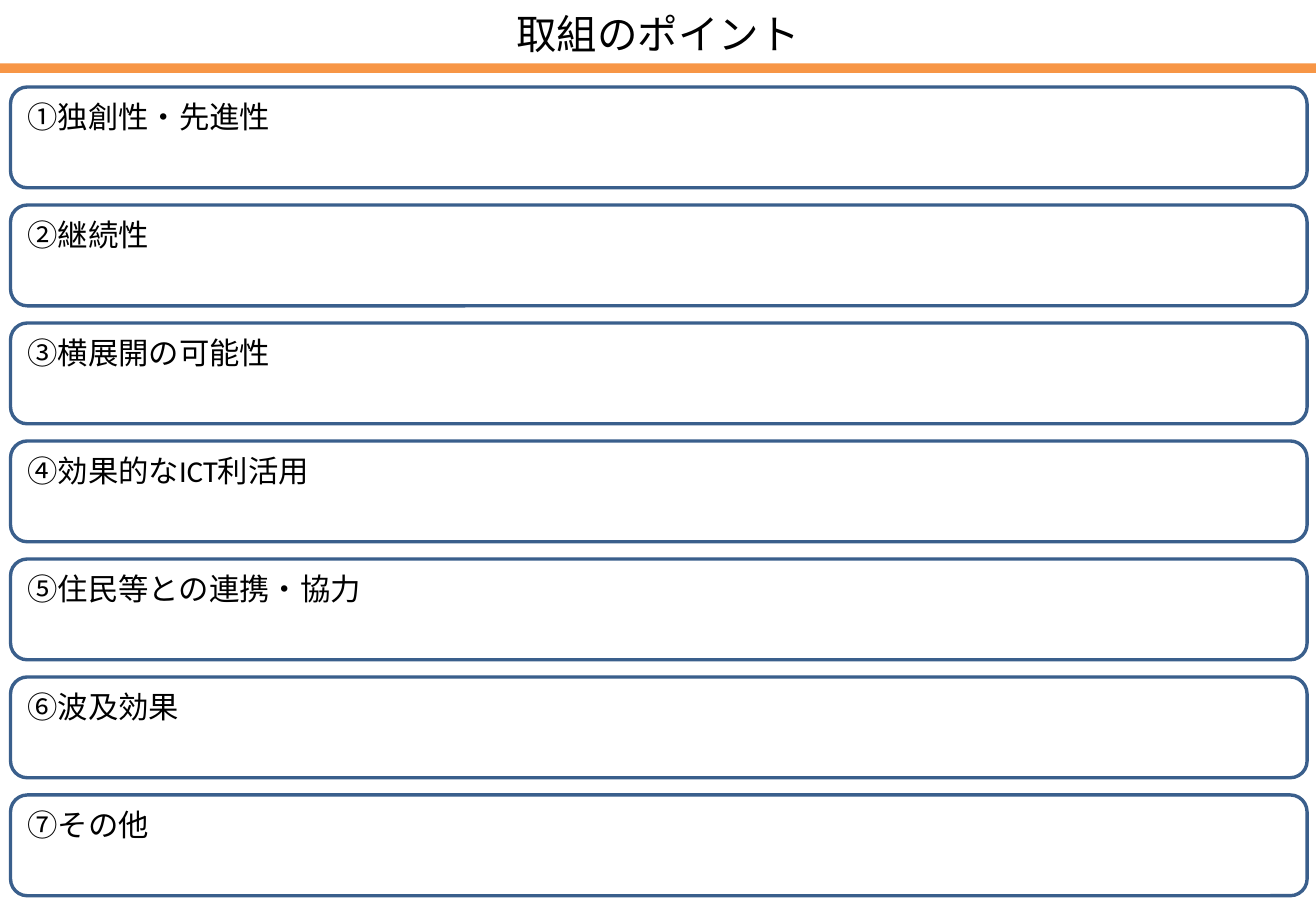
from pptx import Presentation
from pptx.dml.color import RGBColor as RGB
from pptx.enum.shapes import MSO_SHAPE as Kind
from pptx.enum.text import MSO_ANCHOR as Anchor, PP_ALIGN as Align
from pptx.util import Pt

TITLE = "取組のポイント"
POINTS = [
    "①独創性・先進性",
    "②継続性",
    "③横展開の可能性",
    "④効果的なICT利活用",
    "⑤住民等との連携・協力",
    "⑥波及効果",
    "⑦その他",
]
THEME = {
    "font": "Calibri",
    "ink": RGB.from_string("000000"),
    "band": RGB.from_string("F79646"),
    "edge": RGB.from_string("3A5F8C"),
    "title": Pt(24),
    "body": Pt(18),
    "line": Pt(2),
}
WIDE, HIGH = 780, 540
LEFT, TOP, STEP = 6.25, 51.6, 69.94
BOX_W, BOX_H = 768.5, 59.75


def write(shape, text, size, align, anchor):
    frame = shape.text_frame
    frame.word_wrap = True
    frame.vertical_anchor = anchor
    para = frame.paragraphs[0]
    para.text = text
    para.alignment = align
    font = para.font
    font.name, font.size = THEME["font"], THEME[size]
    font.color.rgb = THEME["ink"]


def draw(shapes, kind, *area):
    shape = shapes.add_shape(kind, *map(Pt, area))
    shape.shadow.inherit = False
    return shape


def main():
    deck = Presentation()
    deck.slide_width, deck.slide_height = Pt(WIDE), Pt(HIGH)
    shapes = deck.slides.add_slide(deck.slide_layouts[6]).shapes

    band = draw(shapes, Kind.RECTANGLE, 0, 37.6, WIDE, 5.6)
    band.fill.solid()
    band.fill.fore_color.rgb = THEME["band"]
    band.line.fill.background()

    title = shapes.add_textbox(*map(Pt, (39, 3, 702, 34)))
    write(title, TITLE, "title", Align.CENTER, Anchor.MIDDLE)

    for row, point in enumerate(POINTS):
        box = draw(shapes, Kind.ROUNDED_RECTANGLE, LEFT, TOP + row * STEP, BOX_W, BOX_H)
        box.fill.background()
        box.line.color.rgb = THEME["edge"]
        box.line.width = THEME["line"]
        write(box, point, "body", Align.LEFT, Anchor.TOP)

    deck.save("out.pptx")


if __name__ == "__main__":
    main()
